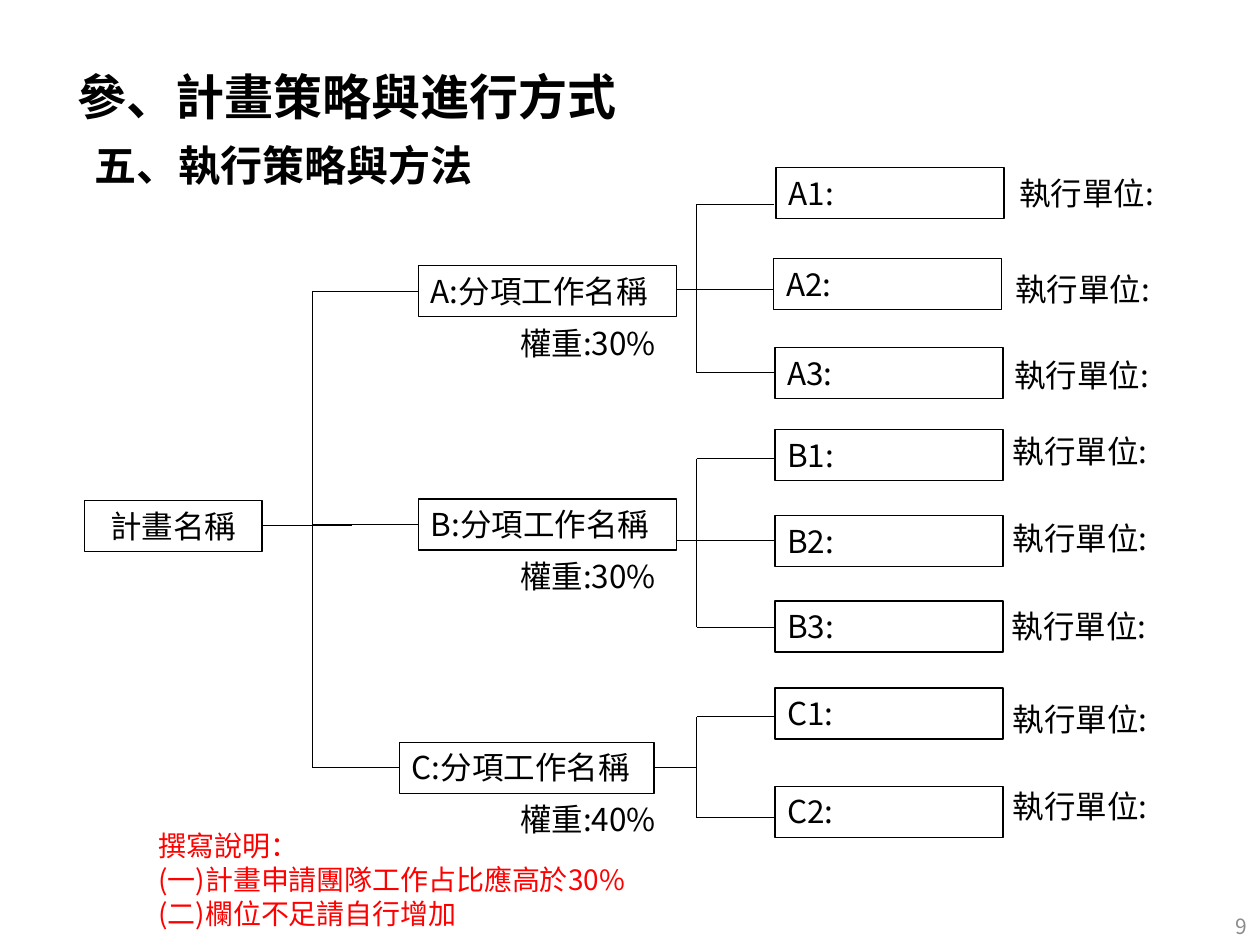
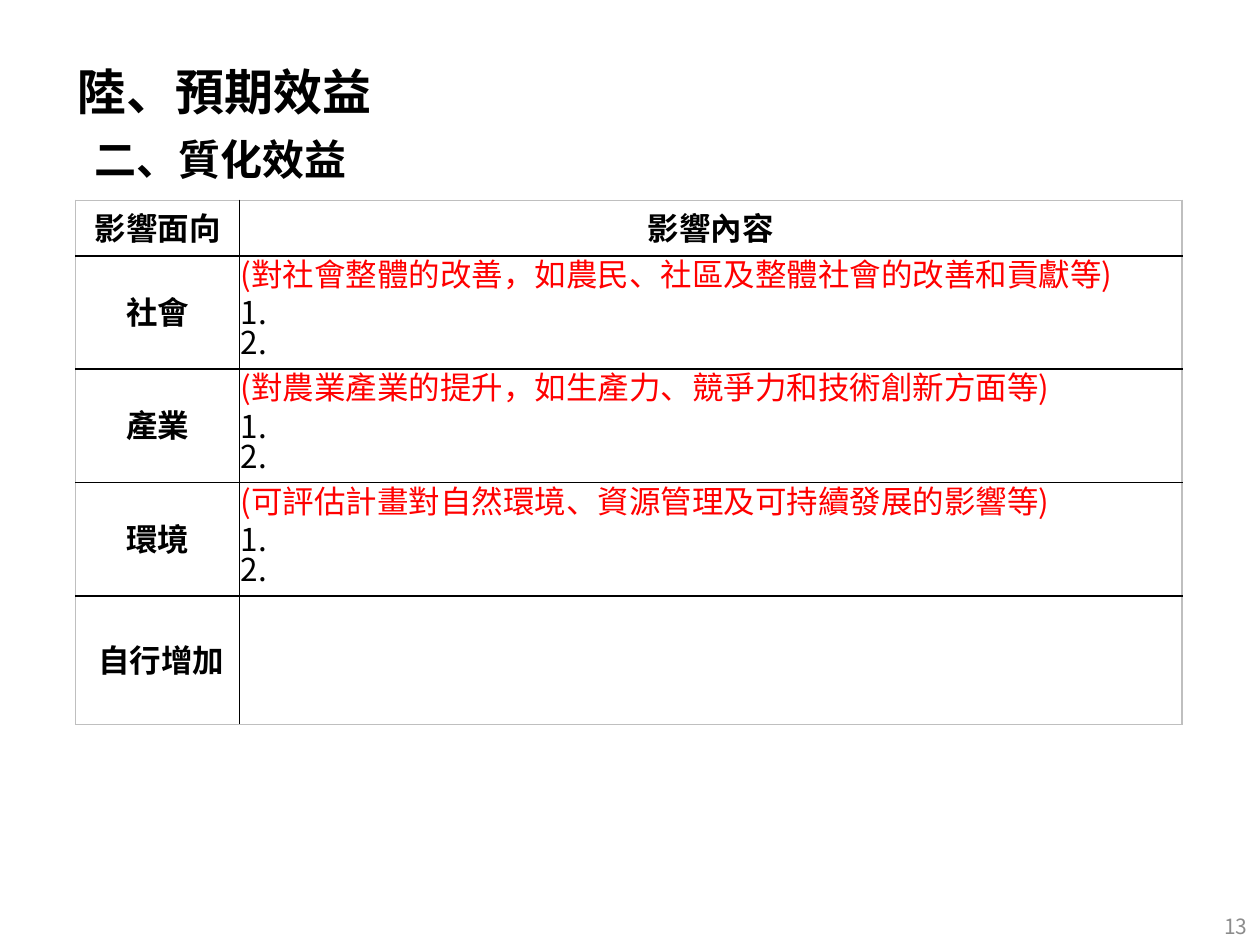
from lxml.etree import SubElement as Sub, Element as Elem
from pptx import Presentation
from pptx.dml.color import RGBColor
from pptx.enum.shapes import MSO_CONNECTOR as Link, MSO_SHAPE as Form
from pptx.enum.text import MSO_ANCHOR as Anchor, PP_ALIGN as Align
from pptx.oxml.ns import qn
from pptx.util import Inches, Pt

BLACK = RGBColor(0, 0, 0)
WHITE = RGBColor(255, 255, 255)
RED = RGBColor(255, 0, 0)
GREY = RGBColor(0x8C, 0x8C, 0x8C)
PALE = RGBColor(0xBF, 0xBF, 0xBF)
FACE = "Noto Sans CJK SC"
WIDE, HIGH = Inches(10), Inches(7.5)
COL, ROW = WIDE // 100, HIGH // 75
BOX = 4.05
BAR = 30.5

BRANCHES = [
    ("A", "30%", 13.3, (8.4, 7.8, 20.5),
     [(36.8, 0, 2.9, 55.1, 0), (36.6, 7.2, 9.7, 54.8, 7.6),
      (36.7, 14.3, 16.3, 54.7, 14.5)]),
    ("B", "30%", 34.1, (8.4, 5.5, 20.5),
     [(36.7, 0, 2.3, 54.6, -0.3), (36.7, 6.8, 8.8, 54.6, 6.6),
      (36.7, 13.6, 15.7, 54.5, 13.6)]),
    ("C", "40%", 54.6, (6.9, 4.3, 20.2),
     [(36.7, 0, 2.3, 54.6, 0.5), (36.7, 7.8, 10.3, 54.6, 7.4)]),
]
EFFECTS = [
    ("社會", "(對社會整體的改善，如農民、社區及整體社會的改善和貢獻等)"),
    ("產業", "(對農業產業的提升，如生產力、競爭力和技術創新方面等)"),
    ("環境", "(可評估計畫對自然環境、資源管理及可持續發展的影響等)"),
]


def grid(x, y, w, h):
    return [round(n) for n in (x * COL, y * ROW, w * COL, h * ROW)]


def style(par, size=18, color=BLACK, bold=False, align=Align.LEFT, space=None):
    par.alignment = align
    if space:
        par.line_spacing = Pt(space)
    font = par.font
    font.size, font.bold, font.name = Pt(size), bold, FACE
    font.color.rgb = color
    base = par._p.pPr.find(qn("a:defRPr"))
    Sub(base, qn("a:ea")).set("typeface", FACE)


def write(frame, lines, **look):
    frame.word_wrap = True
    frame.text = "\n".join(lines)
    for par in frame.paragraphs:
        style(par, **look)


def label(slide, box, *lines, anchor=Anchor.TOP, **look):
    frame = slide.shapes.add_textbox(*grid(*box)).text_frame
    frame.vertical_anchor = anchor
    write(frame, lines, **look)


def node(slide, box, text, anchor=Anchor.TOP, **look):
    shape = slide.shapes.add_shape(Form.RECTANGLE, *grid(*box))
    shape.shadow.inherit = False
    shape.fill.solid()
    shape.fill.fore_color.rgb = WHITE
    shape.line.color.rgb = BLACK
    shape.line.width = Pt(0.75)
    shape.text_frame.vertical_anchor = anchor
    write(shape.text_frame, [text], **look)


def wire(slide, *ends):
    line = slide.shapes.add_connector(Link.STRAIGHT, *grid(*ends))
    line.line.color.rgb = BLACK
    line.line.width = Pt(0.5)
    Sub(line._element.spPr, qn("a:effectLst"))


def page(deck, top, title, part, gap, number):
    slide = deck.slides.add_slide(deck.slide_layouts[6])
    label(slide, (5.2, top, 90, 5.7), title, size=28, bold=True)
    label(slide, (6.5, top + gap, 92.1, 5), part, size=24, bold=True)
    label(slide, (77.5, 71.5, 22.5, 4), number, size=12, color=GREY,
          align=Align.RIGHT, anchor=Anchor.MIDDLE)
    return slide


def branch(slide, left, top, name, share, head, leaves):
    shift, drop, width = head
    start, level = left + shift, top + drop
    bar = left + BAR
    ticks = [top + leaf[2] for leaf in leaves]
    count = len(ticks)
    hub = (ticks[(count - 1) // 2] + ticks[count // 2]) / 2
    wire(slide, left, level + 2, start, level + 2)
    wire(slide, start + width, hub, bar, hub)
    wire(slide, bar, ticks[0], bar, ticks[-1])
    for order, (x, y, tick, side, rise) in enumerate(leaves, 1):
        wire(slide, bar, top + tick, left + 36.6, top + tick)
        node(slide, (left + x, top + y, 18.1, BOX), f"{name}{order}:")
        label(slide, (left + side, top + rise, 15, BOX), "執行單位:")
    node(slide, (start, level, width, BOX), f"{name}:分項工作名稱")
    label(slide, (left + 15.5, level + 4.1, 15, BOX), f"權重:{share}")


def tree(slide, left, top):
    trunk = left + 18.1
    wire(slide, left + 14.1, top + 2, left + 21.2, top + 2)
    wire(slide, trunk, 23.1, trunk, 60.9)
    node(slide, (left, top, 14.1, BOX), "計畫名稱", Anchor.MIDDLE,
         align=Align.CENTER)
    for name, share, level, head, leaves in BRANCHES:
        branch(slide, trunk, level, name, share, head, leaves)


def edge(cell, sides):
    for order, (side, color, width) in enumerate(sides):
        line = Elem(qn(f"a:ln{side}"), w=str(Pt(width)))
        fill = Sub(line, qn("a:solidFill"))
        Sub(fill, qn("a:srgbClr"), val=str(color))
        cell._tc.get_or_add_tcPr().insert(order, line)


def pad(cell, *sizes):
    (cell.margin_left, cell.margin_top,
     cell.margin_right, cell.margin_bottom) = [Inches(n) for n in sizes]


def title(cell, text):
    pad(cell, 0.07, 0, 0.07, 0)
    cell.vertical_anchor = Anchor.MIDDLE
    write(cell.text_frame, [text], bold=True, align=Align.CENTER, space=24)


def effect(cell, hint):
    pad(cell, 0.01, 0.01, 0.01, 0)
    write(cell.text_frame, [hint, "1.", "2."], space=22)
    first, *_, last = cell.text_frame.paragraphs
    first.font.color.rgb = RED
    last.line_spacing = Pt(17)


def table(slide, box, cols, rows):
    grid_table = slide.shapes.add_table(len(rows), len(cols), *grid(*box)).table
    for col, width in zip(grid_table.columns, cols):
        col.width = round(width * COL)
    for row, height in zip(grid_table.rows, rows):
        row.height = round(height * ROW)
    end = len(rows) - 1
    for y in range(len(rows)):
        for x in range(len(cols)):
            cell = grid_table.cell(y, x)
            cell.fill.background()
            edge(cell, [("L", BLACK if x else PALE, 0.75),
                        ("R", PALE if x else BLACK, 1 if x else 0.75),
                        ("T", BLACK if y else PALE, 1),
                        ("B", PALE if y == end else BLACK, 1)])
    title(grid_table.cell(0, 0), "影響面向")
    title(grid_table.cell(0, 1), "影響內容")
    for y, (name, hint) in enumerate(EFFECTS, 1):
        title(grid_table.cell(y, 0), name)
        effect(grid_table.cell(y, 1), hint)
    extra = grid_table.cell(end, 0)
    title(extra, "自行增加")
    extra.margin_left = Inches(0.13)


def main():
    deck = Presentation()
    deck.slide_width, deck.slide_height = WIDE, HIGH
    plan = page(deck, 4.8, "參、計畫策略與進行方式", "五、執行策略與方法", 5.8, "9")
    tree(plan, 6.7, 39.7)
    label(plan, (11.6, 65.3, 53.7, 9.4), "撰寫說明：",
          "(一)計畫申請團隊工作占比應高於30%", "(二)欄位不足請自行增加",
          size=16, color=RED)
    gain = page(deck, 4.4, "陸、預期效益", "二、質化效益", 5.7, "13")
    table(gain, (6, 15.9, 87.8, 41.6), (13, 74.8), (4.4, 9, 9, 9, 10.2))
    deck.save("out.pptx")


if __name__ == "__main__":
    main()
